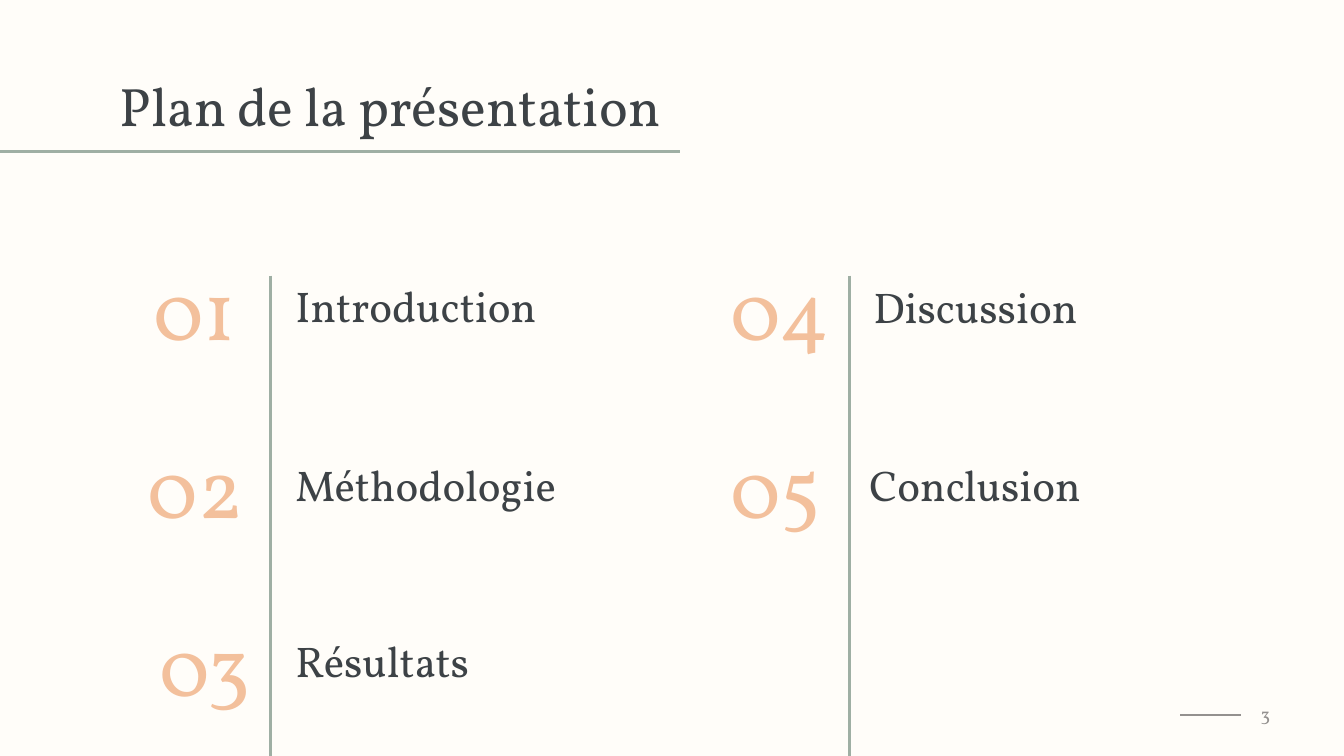
import pptx
import pptx.util
import pptx.dml.color
import pptx.enum.shapes
import pptx.enum.text
import pptx.oxml

deck = pptx.Presentation()
deck.slide_width = pptx.util.Inches(10)
deck.slide_height = deck.slide_width * 9 // 16
cell = deck.slide_width / 100  # square grid, 100 columns wide
base = deck.slide_height / cell

DARK, PEACH, GREEN, GREY = "3D4246", "F3C09C", "9FAFA4", "94918F"
hue = pptx.dml.color.RGBColor.from_string

slide = deck.slides.add_slide(deck.slide_layouts[5])
slide.background.fill.solid()
slide.background.fill.fore_color.rgb = hue("FFFDF9")


def write(text, x, y, w, h, size, color=DARK, align="LEFT", box=None):
    """Set text centred on grid row y, in a given box or a new text box."""
    left, top, wide, high = [round(n * cell) for n in (x, y - h / 2, w, h)]
    if box is None:
        box = slide.shapes.add_textbox(left, top, wide, high)
    box.left, box.top, box.width, box.height = left, top, wide, high
    frame = box.text_frame
    frame.word_wrap = True
    frame.auto_size = pptx.enum.text.MSO_AUTO_SIZE.NONE
    frame.vertical_anchor = pptx.enum.text.MSO_ANCHOR.MIDDLE
    frame.margin_left = frame.margin_right = round(cell)
    frame.margin_top = frame.margin_bottom = round(cell)
    para = frame.paragraphs[0]
    para.alignment = getattr(pptx.enum.text.PP_ALIGN, align)
    run = para.add_run()
    run.text = text
    run.font.name = "Vollkorn"
    run.font.size = pptx.util.Pt(size)
    run.font.color.rgb = hue(color)


def rule(x1, y1, x2, y2, color=GREEN, width=1.5):
    ends = [round(n * cell) for n in (x1, y1, x2, y2)]
    line = slide.shapes.add_connector(
        pptx.enum.shapes.MSO_CONNECTOR.STRAIGHT, *ends)
    line.line.color.rgb = hue(color)
    line.line.width = pptx.util.Pt(width)
    props = line._element.spPr
    props.append(pptx.oxml.parse_xml(
        '<a:effectLst xmlns:a='
        '"http://schemas.openxmlformats.org/drawingml/2006/main"/>'))


# Heading
write("Plan de la présentation", 7.9, 7.8, 84.3, 6.3, 29,
      box=slide.shapes.title)
rule(0, 11.3, 50.6, 11.3)

# Sections: number, its column and row, name, its column and row
parts = [
    ("01", 10.4, 22.8, "Introduction", 21, 22.75),
    ("02", 10, 36.1, "Méthodologie", 21, 36.05),
    ("03", 10.9, 49.35, "Résultats", 21, 49.1),
    ("04", 53.4, 22.8, "Discussion", 64, 22.8),
    ("05", 53.4, 36.1, "Conclusion", 63.7, 36.05),
]
for num, numx, numy, name, namex, namey in parts:
    write(num, numx, numy, 10.1, 6.5, 45, color=PEACH)
    write(name, namex, namey, 26, 4, 23)

for x in (20.1, 63.2):
    rule(x, 20.5, x, base)

# Page number
rule(87.8, 53.2, 92.3, 53.2, color=GREY, width=0.75)
write("3", 89.5, 53.15, 6, 3.7, 10, color=GREY, align="RIGHT")

deck.save("out.pptx")
